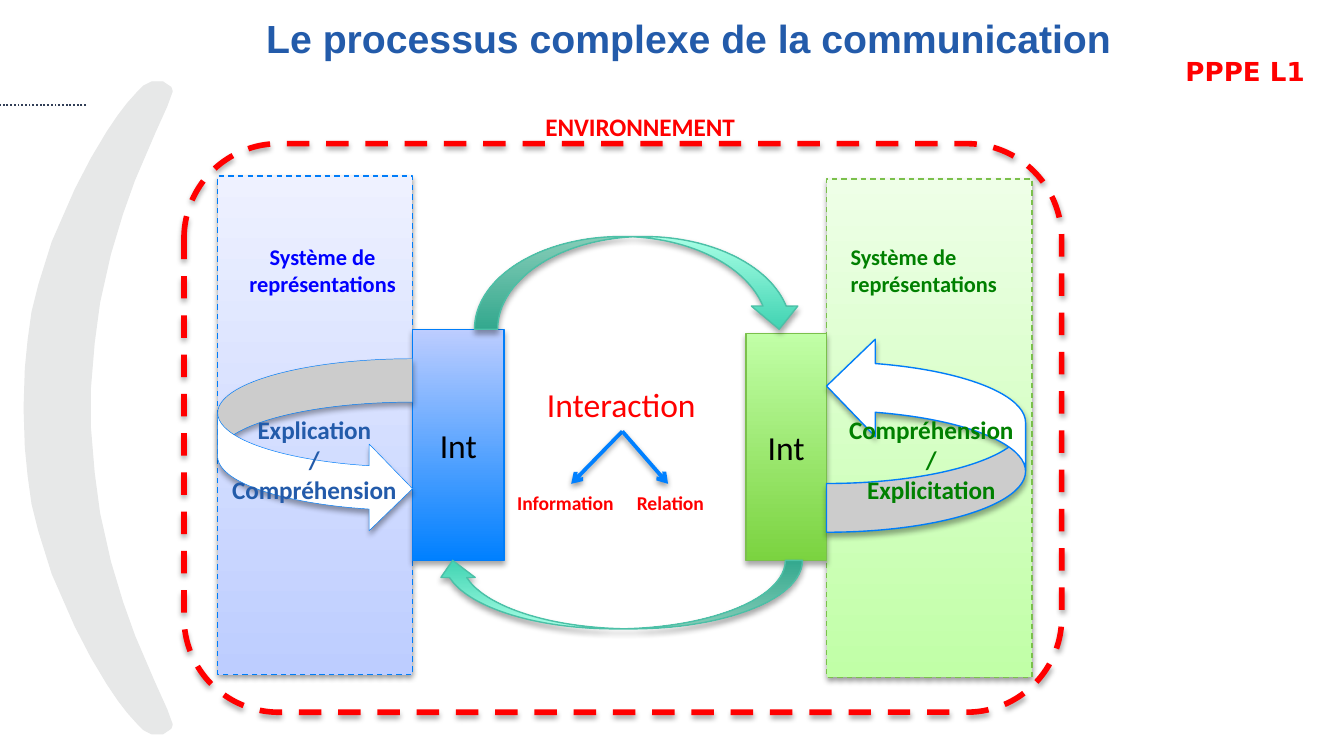
from lxml.etree import SubElement
from pptx import Presentation
from pptx.dml.color import RGBColor
from pptx.enum.dml import MSO_LINE
from pptx.enum.shapes import MSO_CONNECTOR, MSO_SHAPE
from pptx.enum.text import MSO_ANCHOR, PP_ALIGN
from pptx.oxml.ns import qn
from pptx.util import Pt

RED, BLUE, GREEN, TITLE_BLUE = "FF0000", "007DF9", "7BC04C", "235BAA"
MINT = ("40D3B2", "A7FFE5")


def color(hex_value):
    return RGBColor.from_string(hex_value)


def set_line(line, hex_value, width, dash=None):
    line.color.rgb = color(hex_value)
    line.width = Pt(width)
    if dash:
        line.dash_style = dash


def set_shadow(shape, alpha=35, distance=1.8):
    """Give a soft shadow below; call after the line has been set."""
    properties = shape._element.spPr
    effects = properties.find(qn("a:effectLst"))
    if effects is None:
        effects = SubElement(properties, qn("a:effectLst"))
    shadow = SubElement(effects, qn("a:outerShdw"), blurRad=str(Pt(3.1)),
                        dist=str(Pt(distance)), dir="5400000", rotWithShape="0")
    black = SubElement(shadow, qn("a:srgbClr"), val="000000")
    SubElement(black, qn("a:alpha"), val=str(alpha * 1000))


def add_shape(slide, kind, box, fill=None, line=None, width=0.75, dash=None, rotation=0):
    """Fill is one colour, a (bottom, top) pair for a gradient, or None."""
    shape = slide.shapes.add_shape(kind, *map(Pt, box))
    shape.rotation = rotation
    shape.shadow.inherit = False
    if fill is None:
        shape.fill.background()
    elif isinstance(fill, tuple):
        shape.fill.gradient()
        shape.fill.gradient_angle = 90
        for stop, position, hex_value in zip(shape.fill.gradient_stops, (0, 1), fill):
            stop.position = position
            stop.color.rgb = color(hex_value)
    else:
        shape.fill.solid()
        shape.fill.fore_color.rgb = color(fill)
    if line:
        set_line(shape.line, line, width, dash)
    else:
        shape.line.fill.background()
    return shape


def write(frame, lines, size, hex_value, bold=True, align=PP_ALIGN.LEFT, font="Calibri"):
    frame.text = "\n".join(lines)
    for paragraph in frame.paragraphs:
        paragraph.alignment = align
        paragraph.font.name = font
        paragraph.font.size = Pt(size)
        paragraph.font.bold = bold
        paragraph.font.color.rgb = color(hex_value)


def add_label(slide, box, lines, size, hex_value, **style):
    frame = slide.shapes.add_textbox(*map(Pt, box)).text_frame
    frame.word_wrap = False
    write(frame, lines, size, hex_value, **style)


def add_crescent(slide, left, top):
    """Draw the grey arc, whose lower half mirrors its upper half."""
    height = 349.2
    upper = [(0, 174.6), (0.7, 153.4), (2.2, 138.2), (4.3, 123.1), (7.9, 108.7),
             (15.1, 85.7), (27.4, 57.6), (36, 41), (44.6, 26.6), (50.4, 18),
             (55.4, 11.5), (61.2, 5), (64.1, 2.2), (68.4, 0), (74.2, 0),
             (78.5, 2.9), (79.2, 5), (76.3, 13), (69.8, 27.4), (59, 52.6),
             (52.6, 70.6), (46.1, 92.2), (40.3, 118.1), (37.4, 139.7), (35.3, 164.9)]
    lower = [(x, height - y) for x, y in reversed(upper)]
    points = [(Pt(left + x), Pt(top + y)) for x, y in upper + lower]
    builder = slide.shapes.build_freeform(*points[0])
    builder.add_line_segments(points[1:], close=True)
    crescent = builder.convert_to_shape()
    crescent.shadow.inherit = False
    crescent.fill.solid()
    crescent.fill.fore_color.rgb = color("E7E8E8")
    set_line(crescent.line, "E7E8E8", 0.75)


def add_line(slide, start, end, hex_value, width, dash=None):
    line = slide.shapes.add_connector(MSO_CONNECTOR.STRAIGHT, *map(Pt, start + end))
    set_line(line.line, hex_value, width, dash)
    SubElement(line._element.spPr, qn("a:effectLst"))
    return line


def add_header(slide, width):
    title = slide.shapes.add_textbox(Pt(142.6), Pt(7.9), Pt(486), Pt(37.4)).text_frame
    title.word_wrap = True
    title.margin_left = title.margin_right = title.margin_top = title.margin_bottom = 0
    write(title, ["Le processus complexe de la communication"], 21, TITLE_BLUE, font="Arial")
    badge_width = 105.8
    badge = add_shape(slide, MSO_SHAPE.RECTANGLE,
                      (width - badge_width, 0, badge_width, 70.6), "FFFFFF").text_frame
    badge.margin_left = badge.margin_right = badge.margin_bottom = 0
    badge.margin_top = Pt(5)
    badge.vertical_anchor = MSO_ANCHOR.MIDDLE
    write(badge, ["PPPE L1"], 14, RED, align=PP_ALIGN.CENTER, font="DejaVu Sans")


def add_speaker(slide, box, panel, actor, loop, heading, process):
    """Each part is a dict of settings; its box is relative to the panel's corner."""
    left, top, width, height = box

    def place(part_box):
        x, y, part_width, part_height = part_box
        return left + x, top + y, part_width, part_height

    background = add_shape(slide, MSO_SHAPE.RECTANGLE, box, dash=MSO_LINE.DASH, **panel)
    set_shadow(background, 38, 1.6)
    person = add_shape(slide, MSO_SHAPE.RECTANGLE, place(actor["box"]),
                       actor["fill"], panel["line"])
    set_shadow(person)
    person.text_frame.vertical_anchor = MSO_ANCHOR.MIDDLE
    write(person.text_frame, ["Int"], 18, "000000", bold=False, align=PP_ALIGN.CENTER)
    set_shadow(add_shape(slide, MSO_SHAPE.CURVED_RIGHT_ARROW, place(loop["box"]), "FFFFFF",
                         BLUE, loop["width"], rotation=loop["rotation"]))
    add_label(slide, place(heading["box"]), ["Système de", "représentations"], 12,
              heading["color"], align=heading["align"])
    add_label(slide, place(process["box"]), process["lines"], 13.5, process["color"],
              align=PP_ALIGN.CENTER)


def add_interaction(slide, left, top):
    """Draw the exchange arrows and the split of the interaction between the speakers."""
    for box, rotation in (((20.9, 0, 175.7, 49.7), 0), ((0, 173.5, 196.6, 36.7), 180)):
        x, y, width, height = box
        set_shadow(add_shape(slide, MSO_SHAPE.CURVED_DOWN_ARROW,
                             (left + x, top + y, width, height), MINT, "4CC0A7",
                             rotation=rotation))
    add_label(slide, (left + 52.6, top + 75.6, 95, 28.8), ["Interaction"], 18, RED, bold=False)
    fork = (left + 100.1, top + 104.4)
    for tip, label_left, label_width, label in ((72.7, 36.7, 67, "Information"),
                                                (124.6, 100.8, 51.1, "Relation")):
        arrow = add_line(slide, fork, (left + tip, top + 132.5), "0080FF", 2)
        SubElement(arrow.line._get_or_add_ln(), qn("a:tailEnd"), type="arrow")
        set_shadow(arrow, 38, 1.6)
        add_label(slide, (left + label_left, top + 132.5, label_width, 20.2),
                  [label], 10.5, RED)


def add_environment(slide, box):
    left, top, width, height = box
    add_label(slide, (left + 186.5, top - 20.9, 117.4, 23.8), ["ENVIRONNEMENT"], 13.5, RED)
    set_shadow(add_shape(slide, MSO_SHAPE.ROUNDED_RECTANGLE, box, line=RED, width=3,
                         dash=MSO_LINE.DASH))


def main():
    presentation = Presentation()
    presentation.slide_width, presentation.slide_height = Pt(720), Pt(405)
    slide = presentation.slides.add_slide(presentation.slide_layouts[6])
    add_crescent(slide, 13, 43.9)
    add_line(slide, (46.1, 56.2), (0, 56.2), "313E56", 1, MSO_LINE.ROUND_DOT)
    add_header(slide, 720)
    add_speaker(
        slide, (116.6, 94.3, 104.4, 267.1),
        panel={"fill": ("BDCDFF", "EEF1FF"), "line": BLUE},
        actor={"box": (104.4, 82.1, 49, 123.8), "fill": ("0080FF", "BDCDFF")},
        loop={"box": (0, 97.9, 104.4, 92.9), "width": 0.25, "rotation": 0},
        heading={"box": (8, 32.4, 96.5, 36), "color": "0000FF", "align": PP_ALIGN.CENTER},
        process={"box": (0, 123.9, 103.7, 56.2), "color": TITLE_BLUE,
                 "lines": ["Explication", "/", "Compréhension"]})
    add_speaker(
        slide, (442.8, 95.8, 110.2, 267.1),
        panel={"fill": ("C1FFA7", "EEFFE7"), "line": GREEN},
        actor={"box": (-43.2, 82.8, 43.2, 121.7), "fill": ("7BD340", "C1FFA7")},
        loop={"box": (0, 84.9, 106.6, 104.4), "width": 0.75, "rotation": 180},
        heading={"box": (5.8, 30.9, 93.6, 36), "color": "008000", "align": PP_ALIGN.LEFT},
        process={"box": (4.3, 122.4, 103.7, 56.2), "color": "008000",
                 "lines": ["Compréhension", "/", "Explicitation"]})
    add_interaction(slide, 233.3, 126.7)
    add_environment(slide, (98.6, 77, 470.2, 304.6))
    presentation.save("out.pptx")


if __name__ == "__main__":
    main()
